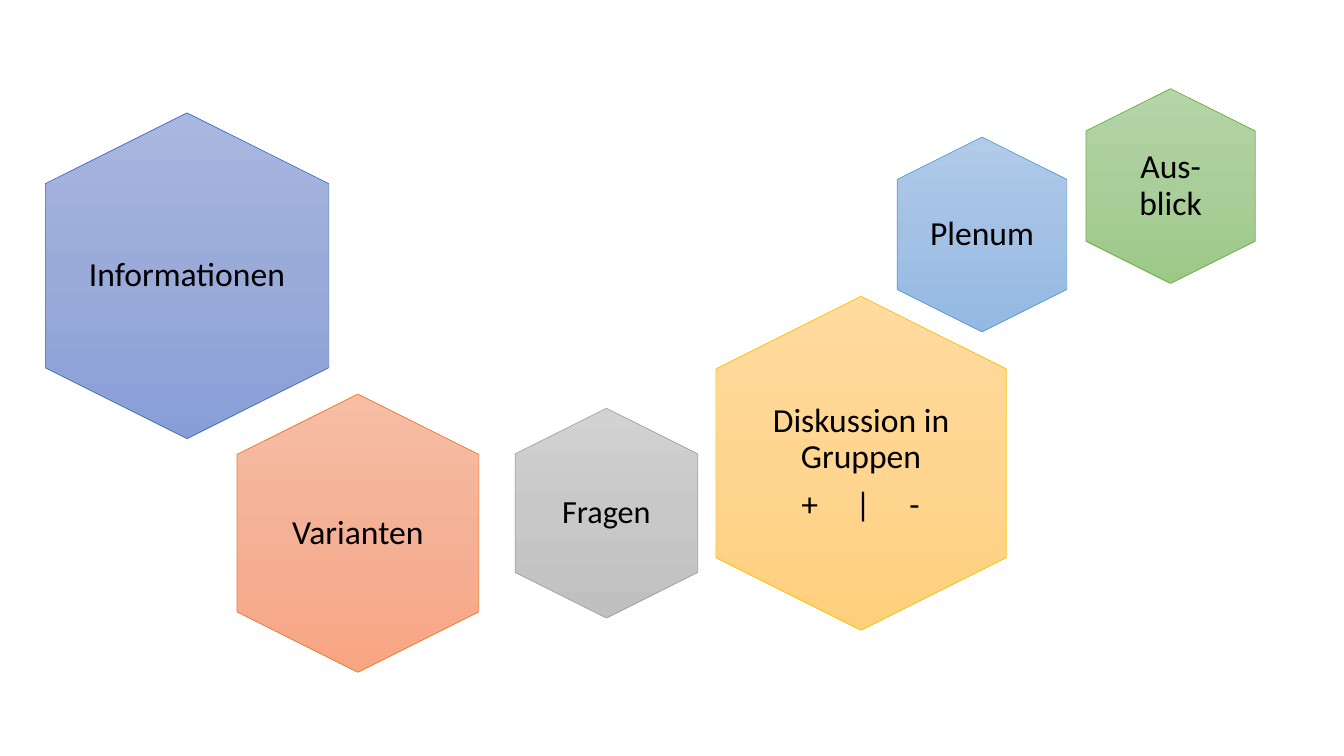
from copy import deepcopy

from pptx import Presentation, util as u
from pptx.dml import color
from pptx.enum import text
from pptx.oxml import parse_xml
from pptx.oxml.ns import nsdecls

STEPS = [
    ((0.45, 1.12, 2.81), ("A8B7DF", "9AABD9", "889ED7"), "4472C4", 0.33, 24, ["Informationen"]),
    ((2.35, 3.91, 2.4), ("F7BDA5", "F5B196", "F8A582"), "ED7D31", 0.24, 24, ["Varianten"]),
    ((5.11, 4.05, 1.81), ("D2D2D2", "C8C8C8", "C0C0C0"), "A5A5A5", 0.33, 23, ["Fragen"]),
    ((7.1, 2.94, 2.88), ("FFDB9E", "FFD590", "FFD07C"), "FFC000", 0.24, 24,
     ["Diskussion in Gruppen", "\t+\t|\t-"]),
    ((10.77, 0.88, 1.68), ("B5D5A7", "AACE9A", "9CC987"), "70AD47", 0.33, 24, ["Aus-blick"]),
    ((8.9, 1.36, 1.68), ("B1CBE9", "A3C1E5", "93B9E4"), "5B9BD5", 0.24, 24, ["Plenum"]),
]


def rgb(code):
    """Turn a hex string into a colour."""
    return color.RGBColor.from_string(code)


def apply(item, values):
    """Set each named value on the item."""
    for name, value in values.items():
        setattr(item, name, value)


def shade(shape, tones):
    """Fill the shape with a gradient running from top to bottom."""
    shape.fill.gradient()
    shape.fill.gradient_angle = 270
    stops = shape._element.xpath(".//a:gsLst")[0]
    stops.append(deepcopy(stops[0]))
    for spot, (stop, tone) in enumerate(zip(shape.fill.gradient_stops, tones)):
        stop.position = spot / 2
        stop.color.rgb = rgb(tone)


def add_tabs(para, stops):
    """Give the paragraph centred tab stops, in inches."""
    tabs = "".join(f'<a:tab pos="{u.Inches(stop)}" algn="ctr"/>' for stop in stops)
    para._p.get_or_add_pPr().append(parse_xml(f'<a:tabLst {nsdecls("a")}>{tabs}</a:tabLst>'))


def write(shape, lines, size, inset):
    """Write the centred label into the hexagon."""
    frame = shape.text_frame
    side, edge = u.Inches(inset), u.Inches(inset * 1.12)
    apply(frame, {"word_wrap": True, "vertical_anchor": text.MSO_ANCHOR.MIDDLE,
                  "margin_left": side, "margin_right": side,
                  "margin_top": edge, "margin_bottom": edge})
    for index, line in enumerate(lines):
        para = frame.add_paragraph() if index else frame.paragraphs[0]
        para.text = line
        tabbed = "\t" in line
        align = text.PP_ALIGN.LEFT if tabbed else text.PP_ALIGN.CENTER
        apply(para, {"alignment": align, "line_spacing": 0.9, "space_after": u.Pt(8.4)})
        if tabbed:
            add_tabs(para, (0.69, 1.22, 1.73))
        for run in para.runs:
            apply(run.font, {"name": "Calibri", "size": u.Pt(size)})
            run.font.color.rgb = rgb("000000")


def add_hex(slide, box, tones, edge, inset, size, lines):
    """Draw one upright hexagon with its label."""
    left, top, wide = box
    high, slope = wide * 1.15, wide / 4
    points = [(wide / 2, 0), (wide, slope), (wide, high - slope),
              (wide / 2, high), (0, high - slope), (0, slope)]
    spots = [(u.Inches(left + x), u.Inches(top + y)) for x, y in points]
    pen = slide.shapes.build_freeform(*spots[0])
    pen.add_line_segments(spots[1:], close=True)
    shape = pen.convert_to_shape()
    shape.shadow.inherit = False
    shade(shape, tones)
    shape.line.color.rgb = rgb(edge)
    shape.line.width = u.Pt(0.5)
    write(shape, lines, size, inset)


def main():
    """Build the slide and save it."""
    deck = Presentation()
    apply(deck, {"slide_width": u.Inches(13.33), "slide_height": u.Inches(7.5)})
    slide = deck.slides.add_slide(deck.slide_layouts[6])
    for step in STEPS:
        add_hex(slide, *step)
    deck.save("out.pptx")


if __name__ == "__main__":
    main()
